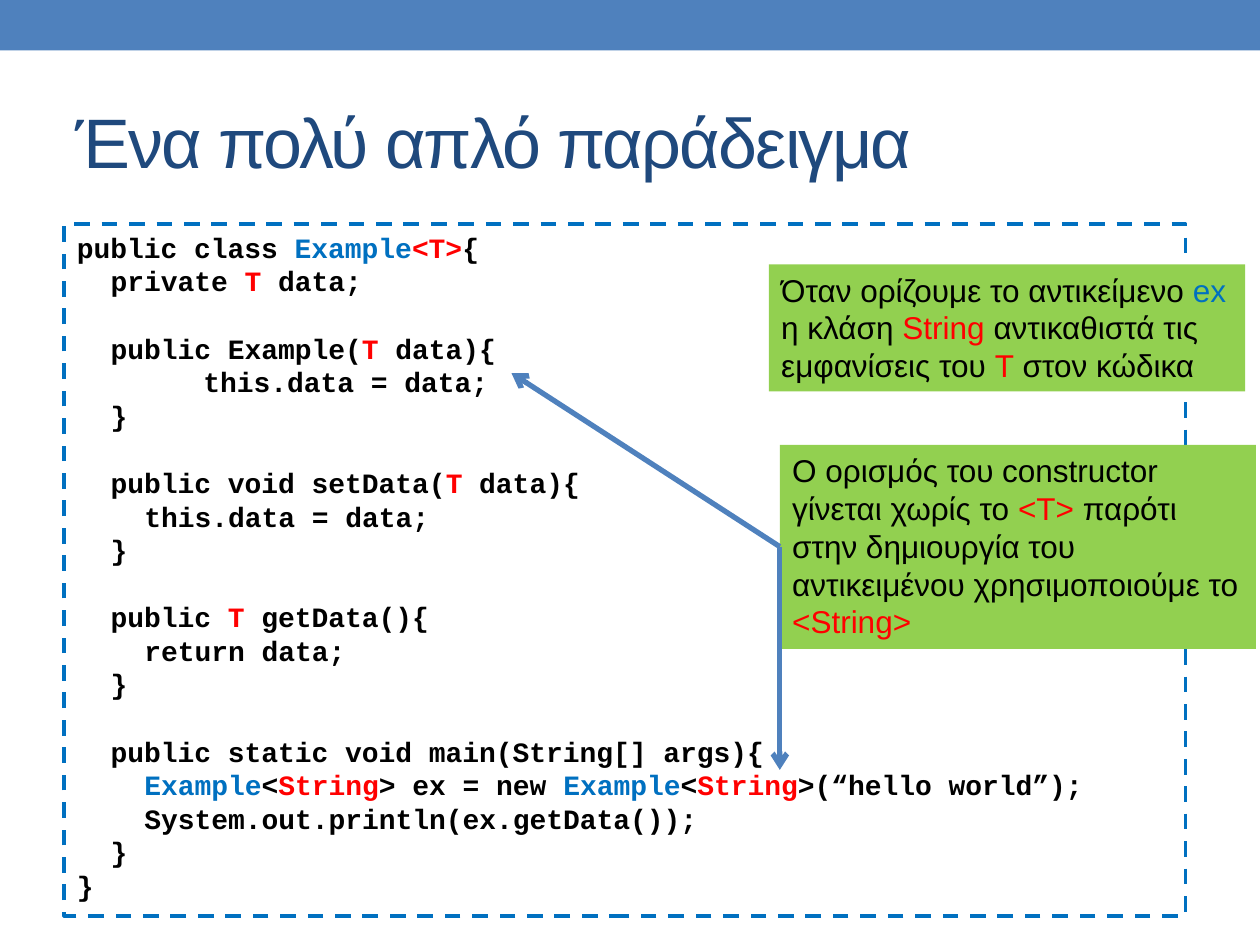
from lxml import etree
from pptx import Presentation
from pptx.dml.color import RGBColor
from pptx.enum.dml import MSO_LINE
from pptx.enum.shapes import MSO_CONNECTOR, MSO_SHAPE
from pptx.enum.text import MSO_ANCHOR, PP_ALIGN
from pptx.oxml.ns import qn
from pptx.util import Cm, Pt

RECTANGLE = MSO_SHAPE.RECTANGLE
STRAIGHT = MSO_CONNECTOR.STRAIGHT
DASH = MSO_LINE.DASH
TOP, MIDDLE = MSO_ANCHOR.TOP, MSO_ANCHOR.MIDDLE
LEFT = PP_ALIGN.LEFT

BLACK = RGBColor(0x00, 0x00, 0x00)
RED = RGBColor(0xFF, 0x00, 0x00)
BLUE = RGBColor(0x00, 0x70, 0xC0)
NAVY = RGBColor(0x1F, 0x49, 0x7D)
STEEL = RGBColor(0x4F, 0x81, 0xBD)
GREEN = RGBColor(0x92, 0xD0, 0x50)

TEXT_FONT, CODE_FONT = "Arial", "Courier New"
CODE_SIZE, CALLOUT_SIZE = 16, 18
LINE_FACTOR = 1.2
INDENT_STEP = 0.68

TYPE_T = ("T", RED)
CLASS_NAME = ("Example", BLUE)
STRING_TYPE = ("String", RED)

CODE_BLOCKS = [
    [
        (0, ["public class ", CLASS_NAME, ("<T>", RED), "{"]),
        (1, ["private ", TYPE_T, " data;"]),
    ],
    [
        (1, ["public Example(", TYPE_T, " data){"]),
        (3.75, ["this.data = data;"]),
        (1, ["}"]),
    ],
    [
        (1, ["public void setData(", TYPE_T, " data){"]),
        (2, ["this.data = data;"]),
        (1, ["}"]),
    ],
    [
        (1, ["public ", ("T ", RED), "getData(){"]),
        (2, ["return data;"]),
        (1, ["}"]),
    ],
    [
        (1, ["public static void main(String[] args){"]),
        (2, [CLASS_NAME, "<", STRING_TYPE, "> ex = new ", CLASS_NAME, "<",
             STRING_TYPE, ">(“hello world”);"]),
        (2, ["System.out.println(ex.getData());"]),
        (1, ["}"]),
        (0, ["}"]),
    ],
]

REPLACEMENT_NOTE = [
    "Όταν ορίζουμε το αντικείμενο ", ("ex ", BLUE), "η κλάση ",
    ("String ", RED), "αντικαθιστά τις εμφανίσεις του ", ("Τ", RED),
    " στον κώδικα",
]
CONSTRUCTOR_NOTE = [
    "Ο ορισμός του constructor γίνεται χωρίς το ", ("<Τ> ", RED),
    "παρότι στην δημιουργία του αντικειμένου χρησιμοποιούμε το ",
    ("<String>", RED),
]


def add_box(slide, left, top, width, height, fill=None):
    box = slide.shapes.add_shape(
        RECTANGLE, Cm(left), Cm(top), Cm(width), Cm(height))
    box.shadow.inherit = False
    if fill is None:
        box.fill.background()
    else:
        box.fill.solid()
        box.fill.fore_color.rgb = fill
    box.line.fill.background()
    box.text_frame.word_wrap = True
    box.text_frame.vertical_anchor = TOP
    return box


def style_run(run, font, size, color, bold=False):
    run.font.name = font
    run.font.size = Pt(size)
    run.font.color.rgb = color
    run.font.bold = bold


def write_segments(paragraph, segments, font, size, bold=False):
    paragraph.alignment = LEFT
    paragraph.line_spacing = Pt(size * LINE_FACTOR)
    for segment in segments:
        words, color = (segment, BLACK) if isinstance(segment, str) else segment
        run = paragraph.add_run()
        run.text = words
        style_run(run, font, size, color, bold)


def add_title(slide, words):
    title = slide.shapes.add_textbox(Cm(1.27), Cm(1.47), Cm(22.86), Cm(2.74))
    frame = title.text_frame
    frame.word_wrap = True
    frame.vertical_anchor = MIDDLE
    frame.text = words
    run = frame.paragraphs[0].runs[0]
    style_run(run, TEXT_FONT, 40, NAVY)
    run.font._element.set("spc", "-100")


def add_code_panel(slide):
    panel = add_box(slide, 1.3, 4.52, 22.6, 13.94)
    panel.line.color.rgb = BLUE
    panel.line.width = Pt(2.25)
    panel.line.dash_style = DASH
    frame = panel.text_frame
    paragraph = frame.paragraphs[0]
    for block_number, block in enumerate(CODE_BLOCKS):
        for line_number, (level, segments) in enumerate(block):
            if block_number or line_number:
                paragraph = frame.add_paragraph()
            if block_number and line_number == 0:
                paragraph.space_before = Pt(CODE_SIZE * LINE_FACTOR)
            write_segments(paragraph, segments, CODE_FONT, CODE_SIZE, bold=True)
            properties = paragraph._p.get_or_add_pPr()
            properties.set("marL", str(Cm(level * INDENT_STEP)))
            properties.set("indent", "0")


def add_callout(slide, left, top, height, segments):
    callout = add_box(slide, left, top, 9.6, height, GREEN)
    write_segments(callout.text_frame.paragraphs[0], segments,
                   TEXT_FONT, CALLOUT_SIZE)


def add_arrow(slide, start, end):
    arrow = slide.shapes.add_connector(
        STRAIGHT, *(Cm(value) for value in (*start, *end)))
    arrow.line.color.rgb = STEEL
    arrow.line.width = Pt(3)
    etree.SubElement(arrow.line._get_or_add_ln(), qn("a:tailEnd"), type="arrow")
    etree.SubElement(arrow._element.spPr, qn("a:effectLst"))


def main():
    presentation = Presentation()
    presentation.slide_width = Cm(25.4)
    presentation.slide_height = Cm(19.05)
    slide = presentation.slides.add_slide(presentation.slide_layouts[6])

    add_box(slide, 0, 0, 25.4, 1.02, STEEL)
    add_title(slide, "Ένα πολύ απλό παράδειγμα")
    add_code_panel(slide)
    add_callout(slide, 15.5, 5.33, 2.56, REPLACEMENT_NOTE)
    add_callout(slide, 15.72, 8.97, 4.11, CONSTRUCTOR_NOTE)

    constructor_note_edge = (15.72, 11.02)
    for code_target in [(10.31, 7.52), (15.72, 15.52)]:
        add_arrow(slide, constructor_note_edge, code_target)

    presentation.save("out.pptx")


if __name__ == "__main__":
    main()
